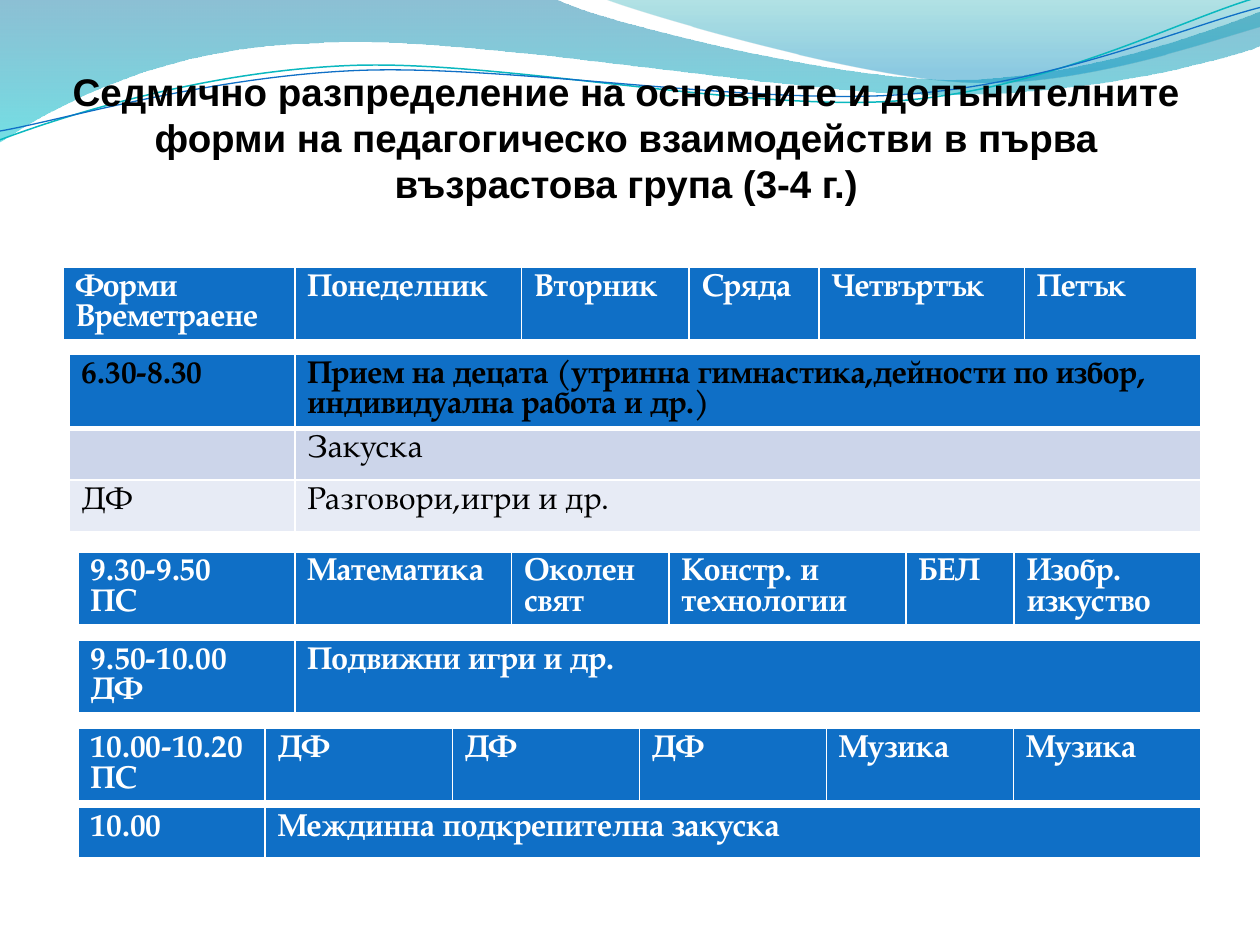
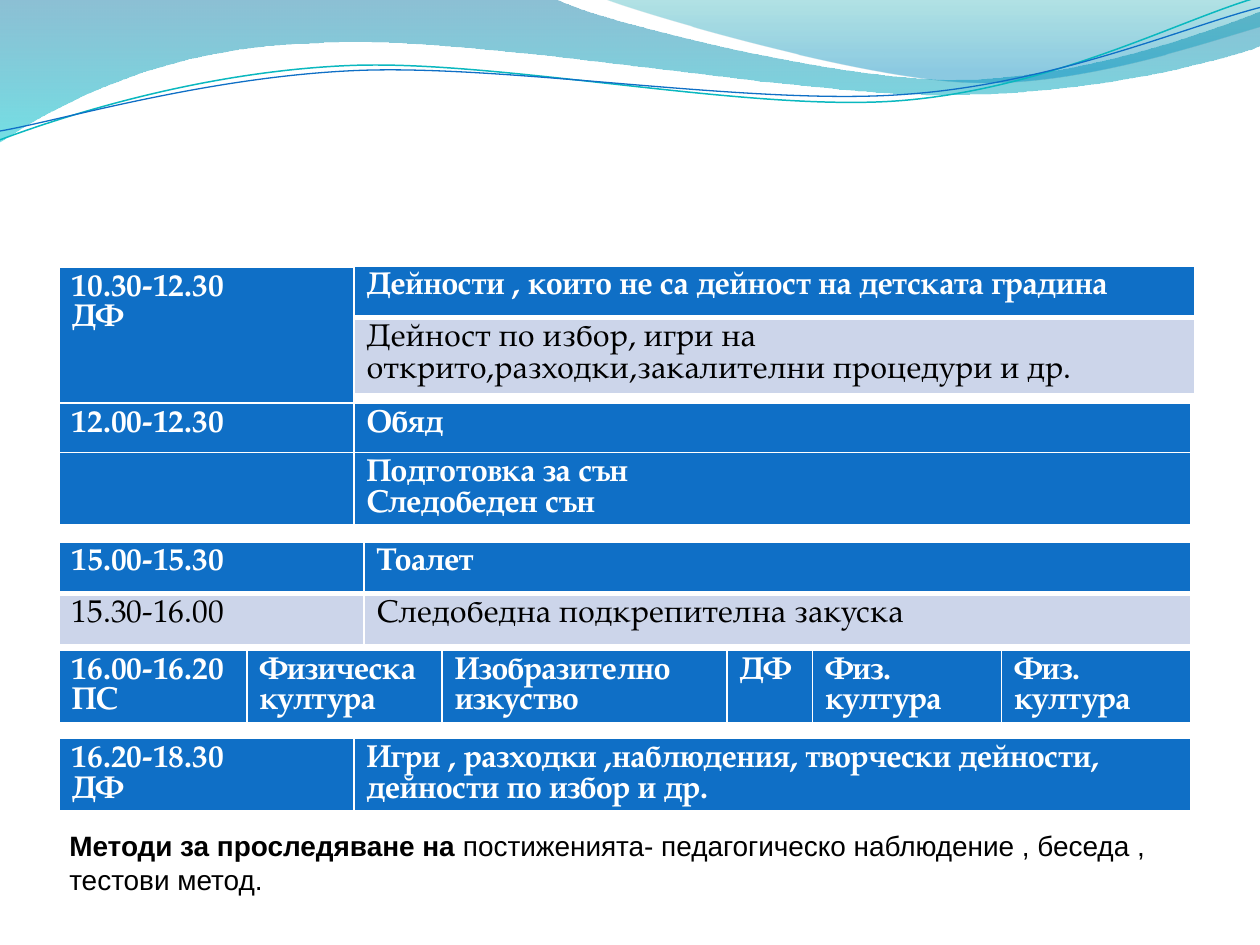
from dataclasses import dataclass
from math import cos, radians, sin

from lxml.etree import SubElement
from pptx import Presentation
from pptx.dml.color import RGBColor
from pptx.enum.text import MSO_ANCHOR, MSO_AUTO_SIZE, PP_ALIGN
from pptx.oxml.ns import qn
from pptx.util import Inches, Pt

# Shared look
BLUE = RGBColor(0x0F, 0x6F, 0xC6)
PALE = RGBColor(0xCC, 0xD5, 0xEA)
LIGHT = RGBColor(0xE7, 0xEB, 0xF5)
WHITE = RGBColor(0xFF, 0xFF, 0xFF)
BLACK = RGBColor(0x00, 0x00, 0x00)
AQUA = RGBColor(0x0A, 0xB8, 0xBF)
DEEP_BLUE = RGBColor(0x00, 0x74, 0xA1)
TURQUOISE = RGBColor(0x00, 0xC6, 0xCF)
TEAL = RGBColor(0x00, 0xA1, 0xA9)
SKY = RGBColor(0x00, 0x8B, 0xBF)
TITLE_FONT = "Arial"
TABLE_FONT = "TeX Gyre Pagella"
TABLE_SIZE = 18
ROW_HEIGHT = 0.41
TITLE_ONLY = 5
LINE_TILT = 357.3


@dataclass(frozen=True)
class Tone:
    fill: RGBColor
    ink: RGBColor
    bold: bool
    bottom: int  # width of the lower border in points


HEADER = Tone(BLUE, WHITE, True, 3)
DARK_HEADER = Tone(BLUE, BLACK, True, 3)
BAND = Tone(PALE, BLACK, False, 1)
LIGHT_BAND = Tone(LIGHT, BLACK, False, 1)


@dataclass(frozen=True)
class Row:
    texts: tuple[str, ...]
    tone: Tone = HEADER


@dataclass(frozen=True)
class Schedule:
    left: float
    top: float
    height: float
    widths: tuple[float, ...]
    rows: tuple[Row, ...]


@dataclass(frozen=True)
class Stop:
    position: float
    color: RGBColor
    opacity: int


@dataclass(frozen=True)
class Wave:
    """Pairs are straight steps, groups of six are Bezier curves."""
    start: tuple[float, float]
    steps: tuple[tuple[float, ...], ...]
    stops: tuple[Stop, ...] = ()
    line: RGBColor | None = None
    weight: float = 0
    rotation: float = 0
    center: tuple[float, float] = (0, 0)


WAVES = (
    Wave((0, 0), ((4.4, -0.01), (4.76, 0.17, 6.64, 0.63, 7.58, 0.63),
                  (8.53, 0.63, 9.58, 0.26, 10, 0.09), (10.01, 0.36),
                  (9.83, 0.44, 8.7, 0.76, 7.46, 0.75),
                  (6.22, 0.75, 3.82, 0.28, 2.57, 0.34),
                  (1.29, 0.36, 0.46, 0.83, -0.01, 1.13), (0, 0)),
         stops=(Stop(0, DEEP_BLUE, 45), Stop(1, TURQUOISE, 55))),
    Wave((4.79, -0.01), ((5.09, 0.11, 6.82, 0.62, 7.69, 0.65),
                         (8.56, 0.69, 9.61, 0.32, 10, 0.21),
                         (10, 0), (4.79, -0.01)),
         stops=(Stop(0, TEAL, 30), Stop(0.8, SKY, 45))),
    Wave((0, 1.11), ((0.48, 0.93, 1.58, 0.57, 2.77, 0.52),
                     (3.95, 0.47, 5.93, 0.89, 7.13, 0.8),
                     (8.33, 0.71, 9.38, 0.15, 9.98, -0.02)),
         line=AQUA, weight=0.85, rotation=LINE_TILT, center=(4.99, 0.57)),
    Wave((0, 1.04), ((0.47, 0.96, 1.64, 0.61, 2.83, 0.56),
                     (4.03, 0.51, 5.97, 0.84, 7.17, 0.75),
                     (8.36, 0.67, 9.41, 0.21, 10, 0.06)),
         line=BLUE, weight=0.75, rotation=LINE_TILT, center=(5, 0.59)),
)

MORNING = (
    Schedule(0.55, 2.81, 1.51, (1.79, 7.19), (
        Row(("6.30-8.30", "Прием на децата (утринна гимнастика,дейности по избор, "
             "индивидуална работа и др.)"), DARK_HEADER),
        Row(("", "Закуска"), BAND),
        Row(("ДФ", "Разговори,игри и др."), LIGHT_BAND))),
    Schedule(0.5, 2.12, 0.7, (1.84, 1.8, 1.33, 1.03, 1.63, 1.37), (
        Row(("Форми\nВреметраене", "Понеделник", "Вторник", "Сряда",
             "Четвъртък", "Петък")),)),
    Schedule(0.62, 4.38, 0.7, (1.72, 1.72, 1.25, 1.88, 0.86, 1.48), (
        Row(("9.30-9.50 \nПС", "Математика", "Околен свят",
             "Констр. и технологии", "БЕЛ", "Изобр.\nизкуство")),)),
    Schedule(0.62, 5.08, 0.7, (1.72, 7.19), (
        Row(("9.50-10.00\nДФ", "Подвижни игри и др.")),)),
    Schedule(0.62, 5.78, 0.7, (8.91 / 6,) * 6, (
        Row(("10.00-10.20\nПС", "ДФ", "ДФ", "ДФ", "Музика", "Музика")),)),
    Schedule(0.62, 6.41, 0.41, (8.91 / 6, 8.91 * 5 / 6), (
        Row(("10.00", "Междинна подкрепителна закуска")),)),
)

AFTERNOON_LEFT = 0.47
AFTERNOON = (
    Schedule(AFTERNOON_LEFT, 2.12, 1.09, (2.34,), (Row(("10.30-12.30\nДФ",)),)),
    Schedule(2.81, 2.11, 1.11, (6.67,), (
        Row(("Дейности , които не са дейност на детската градина",)),
        Row(("Дейност по избор, игри на открито,разходки,закалителни "
             "процедури и др.",), BAND))),
    Schedule(AFTERNOON_LEFT, 3.2, 0.41, (2.34, 6.64), (
        Row(("12.00-12.30", "Обяд")),)),
    Schedule(AFTERNOON_LEFT, 3.59, 0.7, (2.34, 6.64), (
        Row(("", "Подготовка за сън\nСледобеден сън")),)),
    Schedule(AFTERNOON_LEFT, 4.3, 0.81, (2.42, 6.56), (
        Row(("15.00-15.30", "Тоалет")),
        Row(("15.30-16.00", "Следобедна подкрепителна закуска"), BAND))),
    Schedule(AFTERNOON_LEFT, 5.16, 0.7, (1.49, 1.55, 2.26, 0.68, 1.5, 1.5), (
        Row(("16.00-16.20\nПС", "Физическа\nкултура", "Изобразително изкуство",
             "ДФ", "Физ. култура", "Физ. култура")),)),
    Schedule(AFTERNOON_LEFT, 5.86, 0.7, (2.34, 6.64), (
        Row(("16.20-18.30\nДФ", "Игри , разходки ,наблюдения, творчески дейности, "
             "дейности по избор и др.")),)),
)


def set_font(font, name: str, size: float, color: RGBColor, bold: bool) -> None:
    font.name, font.size, font.bold = name, Pt(size), bold
    font.color.rgb = color


def wave_points(wave: Wave) -> list[tuple[int, int]]:
    """List corners and control points as they lie before the rotation."""
    flat = [*wave.start, *(value for step in wave.steps for value in step)]
    angle = radians(-wave.rotation)
    center_x, center_y = wave.center
    points = []
    for x, y in zip(flat[::2], flat[1::2]):
        dx, dy = x - center_x, y - center_y
        points.append((Inches(center_x + dx * cos(angle) - dy * sin(angle)),
                       Inches(center_y + dx * sin(angle) + dy * cos(angle))))
    return points


def bend(shape, wave: Wave) -> None:
    """Turn each run of three straight steps that stands for a curve into one."""
    segments = iter(list(shape.element.iter(qn("a:lnTo"))))
    for step in wave.steps:
        first = next(segments)
        if len(step) == 2:
            continue
        first.tag = qn("a:cubicBezTo")
        for _ in range(2):
            segment = next(segments)
            first.append(segment[0])
            segment.getparent().remove(segment)


def draw_wave(page, wave: Wave):
    first, *others = wave_points(wave)
    builder = page.shapes.build_freeform(*first, scale=1.0)
    builder.add_line_segments(others, close=bool(wave.stops))
    shape = builder.convert_to_shape()
    bend(shape, wave)
    shape.rotation = wave.rotation
    shape.shadow.inherit = False
    if not wave.stops:
        shape.fill.background()
        shape.line.color.rgb = wave.line
        shape.line.width = Pt(wave.weight)
        return shape
    shape.line.fill.background()
    shape.fill.gradient()
    shape.fill.gradient_angle = 270
    for target, stop in zip(shape.fill.gradient_stops, wave.stops):
        target.position = stop.position
        target.color.rgb = stop.color
    for color, stop in zip(shape.element.iter(qn("a:srgbClr")), wave.stops):
        SubElement(color, qn("a:alpha"), val=str(stop.opacity * 1000))
    return shape


def add_waves_to_master(deck, page) -> None:
    """Place the waves behind everything, once for all slides."""
    anchor = deck.slide_master.shapes[0].element
    for wave in WAVES:
        anchor.addprevious(draw_wave(page, wave).element)


def add_borders(cell, bottom: int) -> None:
    properties = cell._tc.get_or_add_tcPr()
    for side, width in (("L", 1), ("R", 1), ("T", 1), ("B", bottom)):
        border = SubElement(properties, qn(f"a:ln{side}"), w=str(Pt(width)))
        fill = SubElement(border, qn("a:solidFill"))
        SubElement(fill, qn("a:srgbClr"), val=str(WHITE))


def fill_cell(cell, text: str, tone: Tone) -> None:
    add_borders(cell, tone.bottom)
    cell.fill.solid()
    cell.fill.fore_color.rgb = tone.fill
    para = cell.text_frame.paragraphs[0]
    para.text = text
    # Runs need their own font, as the table style outranks the paragraph
    for font in (para.font, *(span.font for span in para.runs)):
        set_font(font, TABLE_FONT, TABLE_SIZE, tone.ink, tone.bold)


def draw_schedule(page, schedule: Schedule) -> None:
    frame = page.shapes.add_table(
        len(schedule.rows), len(schedule.widths), Inches(schedule.left),
        Inches(schedule.top), Inches(sum(schedule.widths)), Inches(schedule.height))
    table = frame.table
    table.first_row = table.horz_banding = False
    for column, width in zip(table.columns, schedule.widths):
        column.width = Inches(width)
    single_cell = len(schedule.rows) == len(schedule.widths) == 1
    for line, row in zip(table.rows, schedule.rows):
        line.height = Inches(schedule.height if single_cell else ROW_HEIGHT)
        for cell, text in zip(line.cells, row.texts):
            fill_cell(cell, text, row.tone)


def place_title(page, left: float, top: float, height: float, align: PP_ALIGN):
    """Set up the title placeholder and return its paragraph."""
    title = page.shapes.title
    title.left, title.top = Inches(left), Inches(top)
    title.width, title.height = Inches(9), Inches(height)
    box = title.text_frame
    box.auto_size = MSO_AUTO_SIZE.NONE
    box.word_wrap = True
    box.vertical_anchor = MSO_ANCHOR.BOTTOM
    box.margin_left = box.margin_right = box.margin_bottom = 0
    box.margin_top = Inches(0.05)
    para = box.paragraphs[0]
    para.alignment = align
    return para


def main() -> None:
    deck = Presentation()
    deck.slide_width, deck.slide_height = Inches(10), Inches(7.5)
    layout = deck.slide_layouts[TITLE_ONLY]

    # Morning
    page = deck.slides.add_slide(layout)
    add_waves_to_master(deck, page)
    para = place_title(page, 0.47, 0.39, 1.25, PP_ALIGN.CENTER)
    para.text = ("Седмично разпределение на основните и допънителните форми на "
                 "педагогическо взаимодействи в първа възрастова група (3-4 г.)")
    set_font(para.font, TITLE_FONT, 22, BLACK, True)
    for schedule in MORNING:
        draw_schedule(page, schedule)

    # Afternoon, with the title below the tables
    page = deck.slides.add_slide(layout)
    para = place_title(page, 0.55, 6.64, 0.47, PP_ALIGN.LEFT)
    for text, bold in (("Методи за проследяване на ", True),
                       ("постиженията- педагогическо наблюдение , беседа , "
                        "тестови метод.", False)):
        span = para.add_run()
        span.text = text
        set_font(span.font, TITLE_FONT, 16, BLACK, bold)
    for schedule in AFTERNOON:
        draw_schedule(page, schedule)

    deck.save("out.pptx")


if __name__ == "__main__":
    main()
